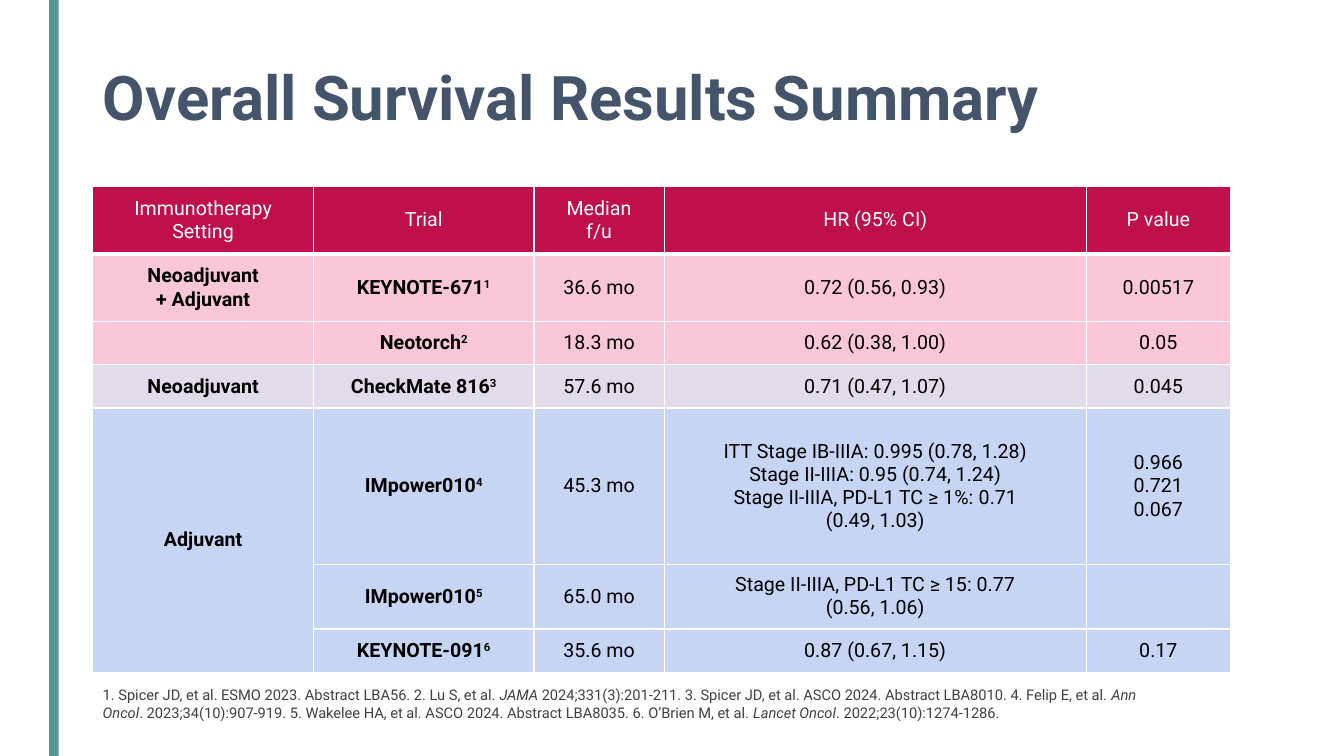
from lxml import etree
from pptx import Presentation
from pptx.dml.color import RGBColor
from pptx.enum.shapes import MSO_SHAPE as Shape
from pptx.enum.text import MSO_ANCHOR as Anchor, PP_ALIGN as Align
from pptx.oxml.ns import qn
from pptx.util import Cm, Pt

FONT = "Roboto"
TEAL = RGBColor(0x54, 0x98, 0x97)
SLATE = RGBColor(0x44, 0x54, 0x6A)
GREY = RGBColor(0x40, 0x40, 0x40)
WHITE = RGBColor(0xFF, 0xFF, 0xFF)
BLACK = RGBColor(0x00, 0x00, 0x00)
CRIMSON = RGBColor(0xBF, 0x10, 0x4B)
PINK = RGBColor(0xFA, 0xC7, 0xD8)
LILAC = RGBColor(0xE2, 0xDB, 0xEA)
BLUE = RGBColor(0xC7, 0xD5, 0xF4)

COLUMN_WIDTHS = [5.56, 5.56, 3.28, 10.64, 3.63]
ROW_HEIGHTS = [1.7, 1.7, 1.09, 1.09, 3.94, 1.63, 1.09]
HR_TABS = [(6.65, "r"), (7.01, "l")]
SETTING, TRIAL, HAZARD = 0, 1, 3

# Row fill, then cell texts: "\n" is a new paragraph, "\v" a line break,
# "^" starts a superscript
ROWS = [
    (CRIMSON, ["Immunotherapy Setting", "Trial", "Median\nf/u", "HR (95% CI)", "P value"]),
    (PINK, ["Neoadjuvant\n+ Adjuvant", "KEYNOTE-671^1", "36.6 mo", "0.72 (0.56, 0.93)", "0.00517"]),
    (PINK, ["", "Neotorch^2", "18.3 mo", "0.62 (0.38, 1.00)", "0.05"]),
    (LILAC, ["Neoadjuvant", "CheckMate 816^3", "57.6 mo", "0.71 (0.47, 1.07)", "0.045"]),
    (BLUE, ["Adjuvant", "IMpower010^4", "45.3 mo",
            "ITT Stage IB-IIIA: \t0.995 (0.78, 1.28)\n"
            "Stage II-IIIA: 0.95 (0.74, 1.24)\n"
            "Stage II-IIIA, PD-L1 TC ≥ 1%: \t0.71\v(0.49, 1.03)",
            "0.966\n0.721\n0.067"]),
    (BLUE, ["", "IMpower010^5", "65.0 mo", "Stage II-IIIA, PD-L1 TC ≥ 15: 0.77\v(0.56, 1.06)", ""]),
    (BLUE, ["", "KEYNOTE-091^6", "35.6 mo", "0.87 (0.67, 1.15)", "0.17"]),
]
ADJUVANT_ROWS = (4, 6)

# Citations: every second piece is a journal name in italics
REFERENCES = [
    "1. Spicer JD, et al. ESMO 2023. Abstract LBA56. 2. Lu S, et al. ", "JAMA ",
    "2024;331(3):201-211. 3. Spicer JD, et al. ASCO 2024. Abstract LBA8010. 4. Felip E, et al. ",
    "Ann Oncol",
    ". 2023;34(10):907-919. 5. Wakelee HA, et al. ASCO 2024. Abstract LBA8035. 6. O’Brien M, et al. ",
    "Lancet Oncol", ". 2022;23(10):1274-1286.",
]


def style(paragraph, size, color, bold=False):
    font = paragraph.font
    font.name, font.size, font.bold = FONT, Pt(size), bold
    font.color.rgb = color


def add_tabs(paragraph, stops):
    tab_list = etree.SubElement(paragraph._p.get_or_add_pPr(), qn("a:tabLst"))
    for position, align in stops:
        etree.SubElement(tab_list, qn("a:tab"), pos=str(Cm(position)), algn=align)


def add_borders(cell, bottom):
    """White lines on all four sides; they must precede the cell fill."""
    properties = cell._tc.get_or_add_tcPr()
    for side, width in (("L", 1), ("R", 1), ("T", 1), ("B", bottom)):
        line = etree.SubElement(properties, qn("a:ln" + side), w=str(Pt(width)))
        fill = etree.SubElement(line, qn("a:solidFill"))
        etree.SubElement(fill, qn("a:srgbClr"), val=str(WHITE))


def fill_cell(cell, text, color, is_header, column):
    add_borders(cell, bottom=3 if is_header else 1)
    cell.fill.solid()
    cell.fill.fore_color.rgb = color
    cell.vertical_anchor = Anchor.MIDDLE
    frame = cell.text_frame
    for index, line in enumerate(text.split("\n")):
        para = frame.add_paragraph() if index else frame.paragraphs[0]
        para.alignment = Align.CENTER
        if "\t" in text:
            add_tabs(para, HR_TABS)
        style(para, 14, WHITE if is_header else BLACK,
              bold=not is_header and column in (SETTING, TRIAL))
        body, _, mark = line.partition("^")
        for part, piece in enumerate(body.split("\v")):
            if part:
                para.add_line_break()
            if piece:
                para.add_run().text = piece
        if mark:
            span = para.add_run()
            span.text = mark
            span.font._element.set("baseline", "30000")


def add_side_bar(page, left, top, width, height):
    bar = page.shapes.add_shape(Shape.RECTANGLE, left, top, width, height)
    bar.shadow.inherit = False
    bar.fill.solid()
    bar.fill.fore_color.rgb = TEAL
    bar.line.fill.background()


def add_title(page, left, top, width, height):
    title = page.shapes.title
    title.left, title.top, title.width, title.height = left, top, width, height
    title.text_frame.text = "Overall Survival Results Summary"
    title.text_frame.vertical_anchor = Anchor.MIDDLE
    para = title.text_frame.paragraphs[0]
    para.alignment = Align.LEFT
    para.line_spacing = 0.9
    style(para, 44, SLATE, bold=True)


def add_results_table(page, left, top, width, height):
    table = page.shapes.add_table(len(ROWS), len(COLUMN_WIDTHS), left, top, width, height).table
    table.first_row = table.horz_banding = False
    for column, column_width in zip(table.columns, COLUMN_WIDTHS):
        column.width = Cm(column_width)
    for row, row_height in zip(table.rows, ROW_HEIGHTS):
        row.height = Cm(row_height)
    for row, (color, texts) in enumerate(ROWS):
        for column, text in enumerate(texts):
            fill_cell(table.cell(row, column), text, color, row == 0, column)
    first, last = ADJUVANT_ROWS
    table.cell(first, SETTING).merge(table.cell(last, SETTING))


def add_references(page, left, top, width, height):
    box = page.shapes.add_textbox(left, top, width, height)
    box.text_frame.word_wrap = True
    para = box.text_frame.paragraphs[0]
    style(para, 10.5, GREY)
    for index, piece in enumerate(REFERENCES):
        span = para.add_run()
        span.text = piece
        if index % 2:
            span.font.italic = True


def main():
    deck = Presentation()
    deck.slide_width, deck.slide_height = Cm(33.87), Cm(19.05)
    page = deck.slides.add_slide(deck.slide_layouts[5])
    left = Cm(2.34)
    add_side_bar(page, Cm(1.24), 0, Cm(0.24), deck.slide_height)
    add_title(page, left, Cm(1.02), Cm(29.21), Cm(3.02))
    add_references(page, left, Cm(17.17), Cm(27.36), Cm(1.19))
    add_results_table(page, left, Cm(4.7), Cm(sum(COLUMN_WIDTHS)), Cm(sum(ROW_HEIGHTS)))
    deck.save("out.pptx")


if __name__ == "__main__":
    main()
